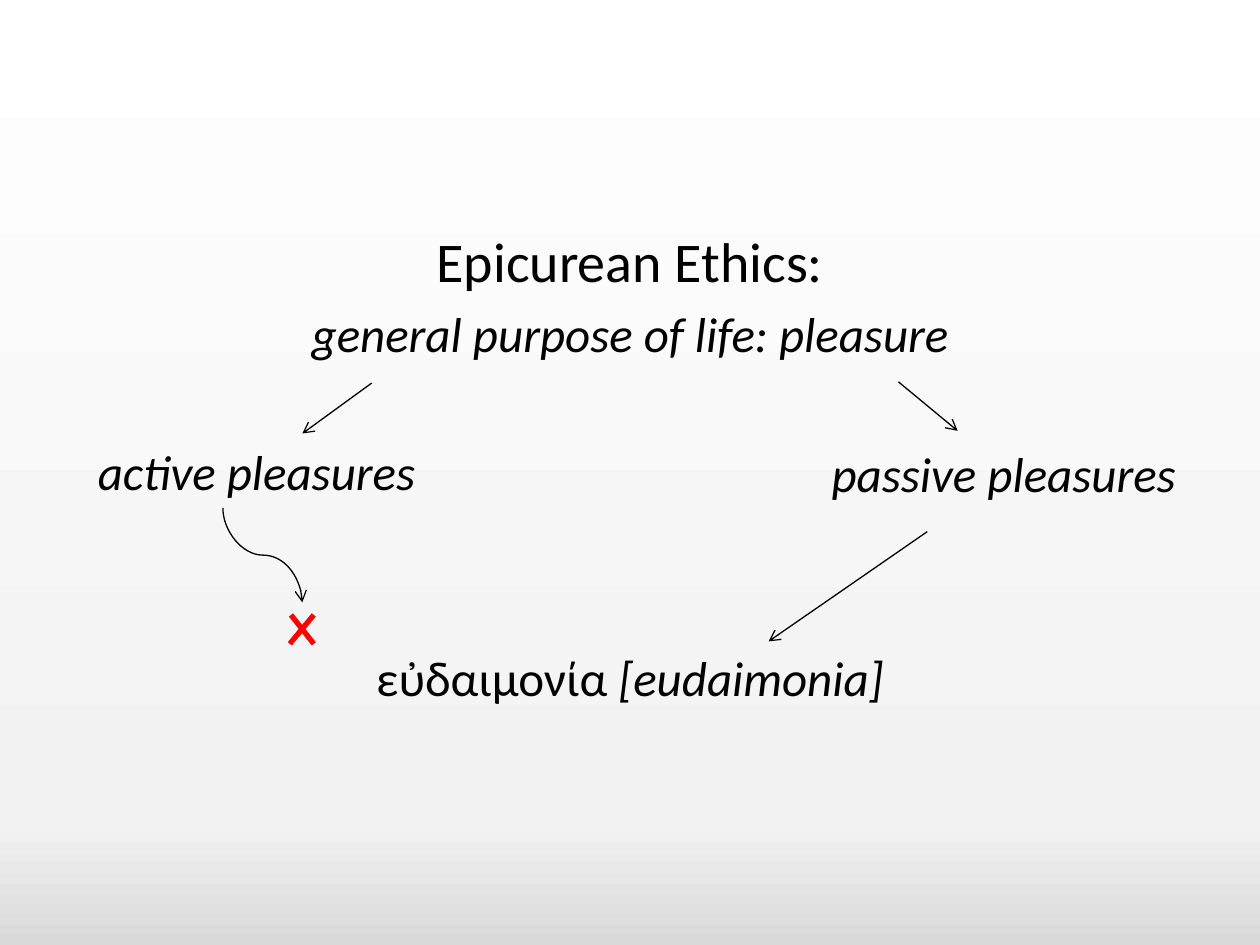
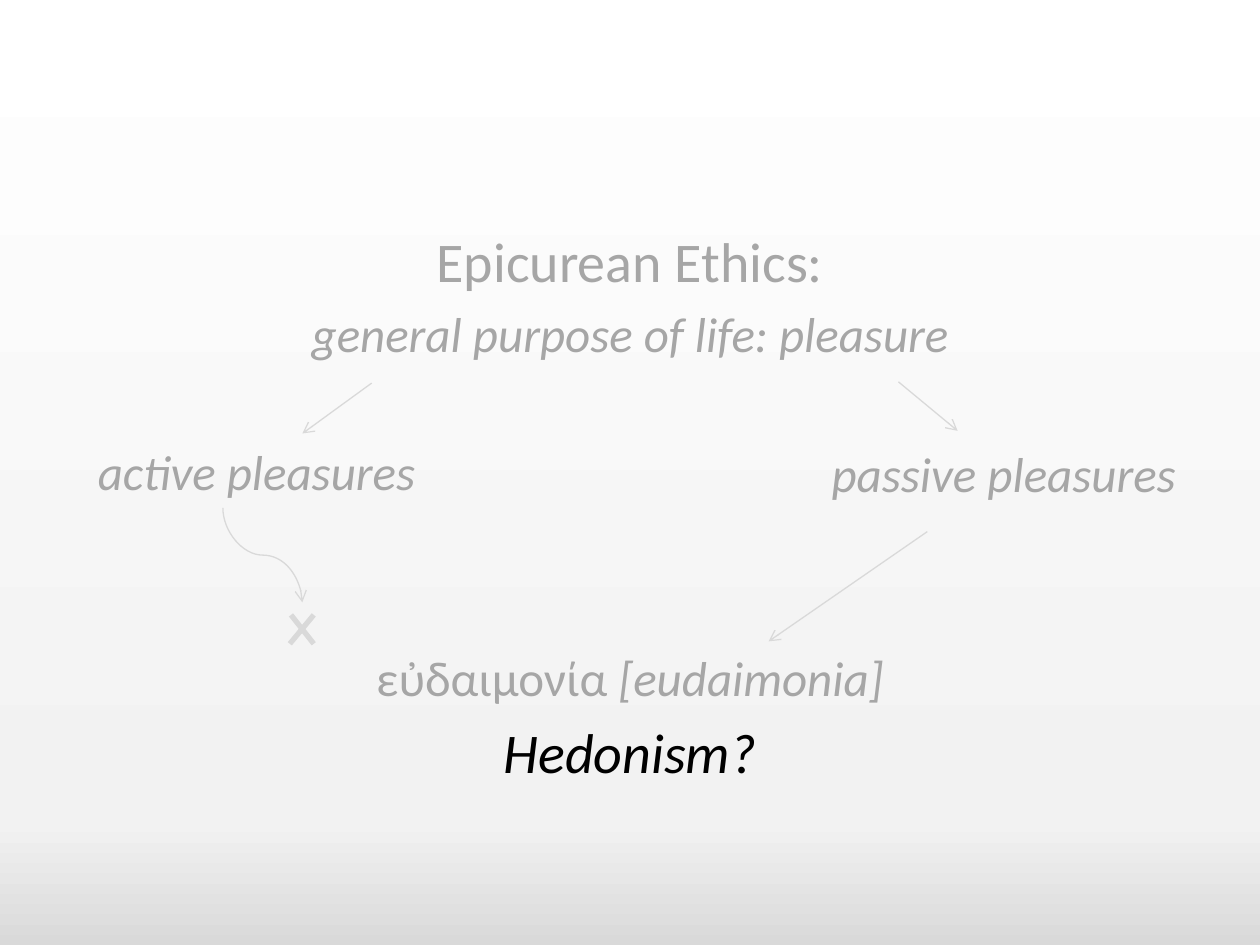
import pptx
import pptx.dml.color
import pptx.enum.shapes
import pptx.enum.text
import pptx.oxml
import pptx.oxml.ns
import pptx.util
from lxml import etree

Pt = pptx.util.Pt
qn = pptx.oxml.ns.qn
CENTER = pptx.enum.text.PP_ALIGN.CENTER
LEFT = pptx.enum.text.PP_ALIGN.LEFT
FONT = "Calibri"
BODY_BOX = (36, 126, 648, 356.4)
PASSIVE_BOX = (439.2, 127.7, 208, 34.2)
BACKGROUND = ((0, "D9D9D9"), (13, "F2F2F2"), (100, "FFFFFF"))

ROWS = (
    (0, 32, CENTER, 0, (("Epicurean Ethics:", False),)),
    (5.6, 28, CENTER, 0, (("general purpose of life: pleasure", True),)),
    (45.2, 28, LEFT, 12.7, (("active pleasures", True),)),
    (84, 28, CENTER, 0, (("εὐδαιμονία ", False), ("[eudaimonia]", True))),
)
PASSIVE = (0, 28, LEFT, 0, (("passive pleasures", True),))
QUESTION = (6.2, 32, CENTER, 0, (("Hedonism?", True),))
ARROWS = (
    (176.4, 92.9, 136.8, 121.7),
    (477.4, 92.2, 511.2, 120.2),
    (493.9, 177.8, 403.2, 240.5),
)
CURVE = (141.1, 168.5, 87.1, 213.9)
CROSS = ((143.3, 225.4, 129.6, 241.9), (143.3, 241.9, 130.3, 225.4))


def rgb(value):
    """Return the colour for a hex string."""
    return pptx.dml.color.RGBColor.from_string(value)


def set_attrs(obj, values):
    """Set each named attribute of an object."""
    for name, value in values.items():
        setattr(obj, name, value)


def set_background(master):
    """Give the master the shared vertical gradient."""
    fill = master.background.fill
    fill.gradient()
    fill.gradient_angle = 90
    stops = master.element.find(".//" + qn("p:bg")).find(".//" + qn("a:gsLst"))
    for stop in list(stops):
        stops.remove(stop)
    for position, colour in BACKGROUND:
        stop = etree.SubElement(stops, qn("a:gs"), pos=str(position * 1000))
        etree.SubElement(stop, qn("a:srgbClr"), val=colour)


def add_row(p, row, colour):
    """Write one line of the diagram into a paragraph."""
    gap, size, align, margin, runs = row
    set_attrs(p, {"space_before": Pt(gap), "alignment": align})
    pPr = p._p.get_or_add_pPr()
    pPr.set("marL", str(int(Pt(margin))))
    pPr.set("indent", "0")
    etree.SubElement(pPr, qn("a:buNone"))
    for text, italic in runs:
        r = p.add_run()
        r.text = text
        set_attrs(r.font, {"name": FONT, "size": Pt(size), "italic": italic})
        r.font.color.rgb = rgb(colour)


def add_body(slide, box, rows):
    """Fill the body placeholder with coloured rows."""
    sp = slide.placeholders[1]
    set_attrs(sp, dict(zip(("left", "top", "width", "height"), map(Pt, box))))
    tf = sp.text_frame
    set_attrs(tf, {"word_wrap": True,
                   "auto_size": pptx.enum.text.MSO_AUTO_SIZE.NONE})
    for i, (row, colour) in enumerate(rows):
        add_row(tf.add_paragraph() if i else tf.paragraphs[0], row, colour)


def add_passive(slide, box, colour):
    """Place the right-hand branch label inside the box."""
    x, y, width, height = PASSIVE_BOX
    sp = slide.shapes.add_textbox(
        Pt(box[0] + x), Pt(box[1] + y), Pt(width), Pt(height))
    tf = sp.text_frame
    set_attrs(tf, {"word_wrap": True, "margin_left": 0, "margin_top": 0,
                   "margin_right": 0, "margin_bottom": 0})
    add_row(tf.paragraphs[0], PASSIVE, colour)


def add_line(slide, box, ends, colour, width=0.75, arrow=True, curved=False):
    """Draw a line or arrow between two points inside the box."""
    kinds = pptx.enum.shapes.MSO_CONNECTOR
    x1, y1, x2, y2 = ends
    left, top = box[:2]
    sp = slide.shapes.add_connector(
        kinds.CURVE if curved else kinds.STRAIGHT,
        Pt(left + x1), Pt(top + y1), Pt(left + x2), Pt(top + y2))
    sp.line.width = Pt(width)
    sp.line.color.rgb = rgb(colour)
    spPr = sp._element.spPr
    if arrow:
        etree.SubElement(spPr.find(qn("a:ln")), qn("a:tailEnd"), type="arrow")
    etree.SubElement(spPr, qn("a:effectLst"))
    if curved:
        spPr.find(qn("a:xfrm")).set("rot", str(270 * 60000))


def add_diagram_slide(prs, box, text, line, cross, question=None):
    """Build the ethics diagram in the given colours."""
    slide = prs.slides.add_slide(prs.slide_layouts[1])
    title = slide.shapes.title._element
    title.getparent().remove(title)
    rows = [(row, text) for row in ROWS]
    if question:
        rows.append((QUESTION, question))
    add_body(slide, box, rows)
    add_passive(slide, box, text)
    for ends in ARROWS:
        add_line(slide, box, ends, line)
    add_line(slide, box, CURVE, line, curved=True)
    for ends in CROSS:
        add_line(slide, box, ends, cross, width=3, arrow=False)


def main():
    """Build and save the presentation."""
    prs = pptx.Presentation()
    set_attrs(prs, {"slide_width": Pt(720), "slide_height": Pt(540)})
    set_background(prs.slide_master)
    add_diagram_slide(prs, BODY_BOX, "000000", "000000", "FF0000")
    add_diagram_slide(prs, BODY_BOX, "A6A6A6", "D9D9D9", "D9D9D9", "000000")
    prs.save("out.pptx")


if __name__ == "__main__":
    main()
